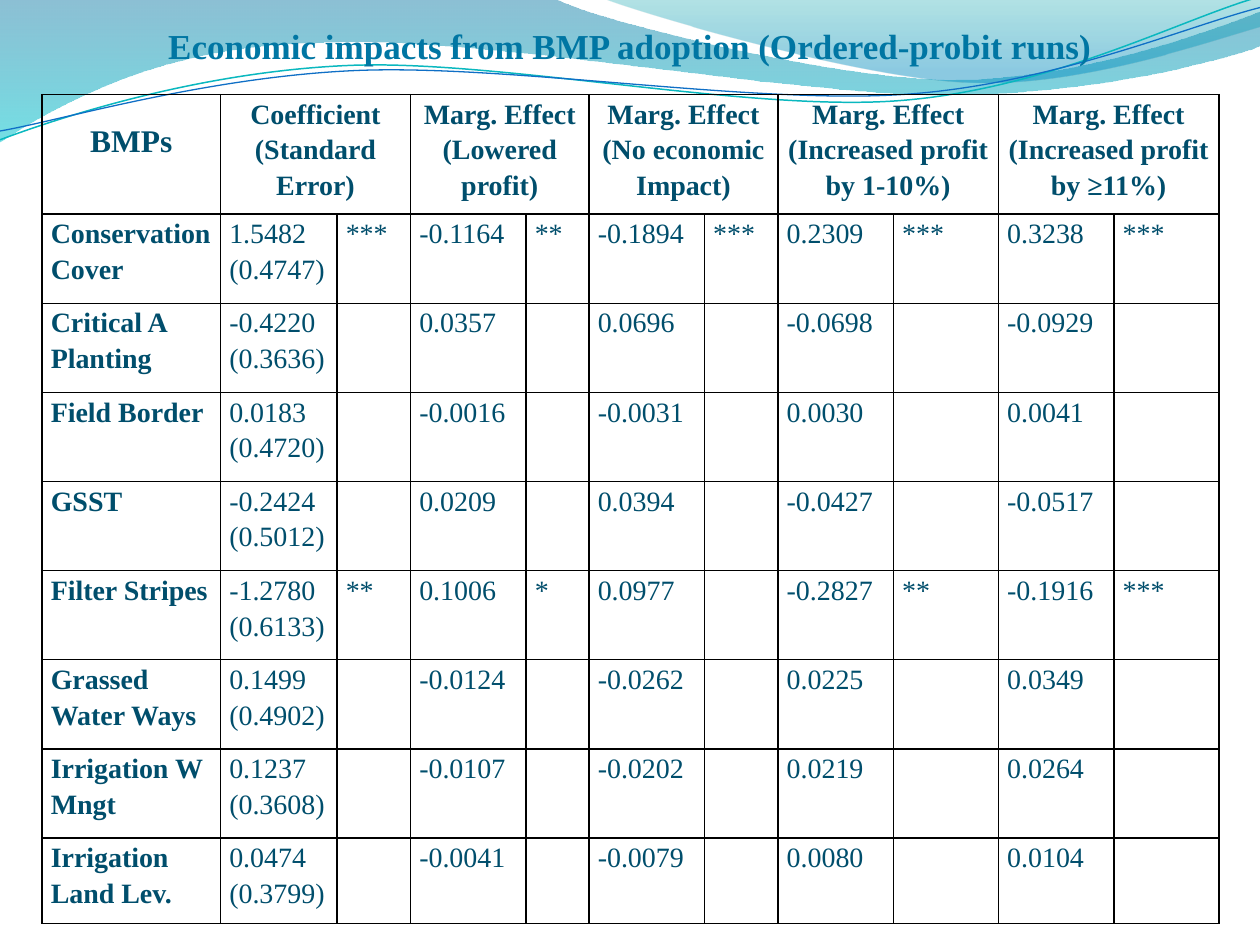
from lxml import etree
from pptx import Presentation
from pptx import util as u
from pptx.dml.color import RGBColor
from pptx.enum import text
from pptx.oxml.ns import qn

FONT = "Times New Roman"
TITLE_BLUE = RGBColor(0x00, 0x76, 0xA3)
TEXT_BLUE = RGBColor(0x00, 0x4E, 0x6C)
TEAL_LINE = RGBColor(0x0A, 0xB8, 0xBF)
BLUE_LINE = RGBColor(0x0F, 0x6F, 0xC6)
DEEP_BLUE = RGBColor(0x00, 0x74, 0xA1)
CYAN = RGBColor(0x00, 0xC6, 0xCF)
TEAL = RGBColor(0x00, 0xA1, 0xA9)
SKY = RGBColor(0x00, 0x8B, 0xBF)

# Content
TITLE = "Economic impacts from BMP adoption (Ordered-probit runs)"
HEADINGS = [
    "Coefficient\n(Standard Error)",
    "Marg. Effect (Lowered profit)",
    "Marg. Effect (No economic Impact)",
    "Marg. Effect (Increased profit by 1-10%)",
    "Marg. Effect (Increased profit by ≥11%)",
]
# Practice, standard error, five estimates, significance marks of the estimates
NO_MARKS = ("",) * 5
PRACTICES = [
    ("Conservation Cover", "0.4747", "1.5482 -0.1164 -0.1894 0.2309 0.3238",
     ("***", "**", "***", "***", "***")),
    ("Critical A Planting", "0.3636", "-0.4220 0.0357 0.0696 -0.0698 -0.0929", NO_MARKS),
    ("Field Border", "0.4720", "0.0183 -0.0016 -0.0031 0.0030 0.0041", NO_MARKS),
    ("GSST", "0.5012", "-0.2424 0.0209 0.0394 -0.0427 -0.0517", NO_MARKS),
    ("Filter Stripes", "0.6133", "-1.2780 0.1006 0.0977 -0.2827 -0.1916",
     ("**", "*", "", "**", "***")),
    ("Grassed Water Ways", "0.4902", "0.1499 -0.0124 -0.0262 0.0225 0.0349", NO_MARKS),
    ("Irrigation W Mngt", "0.3608", "0.1237 -0.0107 -0.0202 0.0219 0.0264", NO_MARKS),
    ("Irrigation Land Lev.", "0.3799", "0.0474 -0.0041 -0.0079 0.0080 0.0104", NO_MARKS),
]
# Table grid: columns in twelfths of an inch, body rows share what is left
COLUMNS = [17, 11.1, 7, 11, 6, 11, 7, 11, 10, 11, 10]
TABLE_HEIGHT, HEADER_HEIGHT, LAST_HEIGHT = 6.58, 0.95, 0.68
BODY_HEIGHT = (TABLE_HEIGHT - HEADER_HEIGHT - LAST_HEIGHT) / (len(PRACTICES) - 1)
ROWS = [HEADER_HEIGHT] + [BODY_HEIGHT] * (len(PRACTICES) - 1) + [LAST_HEIGHT]

# Outlines in inches: a start, then steps of one point (line) or three (curve)
BANDS = [
    ([[(0, -0.01)], [(4.4, -0.01)],
      [(4.76, 0.17), (6.64, 0.63), (7.58, 0.63)],
      [(8.53, 0.63), (9.58, 0.26), (10, 0.09)], [(10.01, 0.36)],
      [(9.83, 0.44), (8.7, 0.76), (7.46, 0.75)],
      [(6.22, 0.75), (3.82, 0.28), (2.57, 0.34)],
      [(1.29, 0.35), (0.46, 0.83), (-0.01, 1.13)], [(0, -0.01)]],
     [(0, DEEP_BLUE, 45), (1, CYAN, 55)]),
    ([[(4.79, -0.01)],
      [(5.09, 0.11), (6.82, 0.62), (7.69, 0.65)],
      [(8.56, 0.69), (9.61, 0.32), (10, 0.21)], [(10, 0)], [(4.79, -0.01)]],
     [(0, TEAL, 30), (0.8, SKY, 45)]),
]
STRANDS = [
    ([[(0, 1.11)],
      [(0.48, 0.93), (1.58, 0.57), (2.77, 0.52)],
      [(3.95, 0.47), (5.93, 0.89), (7.13, 0.8)],
      [(8.33, 0.71), (9.38, 0.15), (9.98, -0.02)]], TEAL_LINE, 0.85),
    ([[(0, 1.04)],
      [(0.47, 0.96), (1.64, 0.61), (2.83, 0.56)],
      [(4.03, 0.51), (5.97, 0.83), (7.17, 0.75)],
      [(8.36, 0.67), (9.41, 0.21), (10, 0.06)]], BLUE_LINE, 0.75),
]


def add_outline(page, steps, closed):
    """Build a freeform, joining each step of three points into a curve."""
    points = [(x * 1000, y * 1000) for step in steps for x, y in step]
    builder = page.shapes.build_freeform(*points[0], scale=u.Inches(1) / 1000)
    builder.add_line_segments(points[1:], close=closed)
    shape = builder.convert_to_shape()
    shape.shadow.inherit = False
    lines = iter(list(shape.element.iter(qn("a:lnTo"))))
    for step in steps[1:]:
        segment = [next(lines) for _ in step]
        if len(step) == 3:
            curve = etree.Element(qn("a:cubicBezTo"))
            segment[0].addprevious(curve)
            for line in segment:
                curve.append(line[0])
                line.getparent().remove(line)
    return shape


def add_waves(deck, page):
    waves = []
    for steps, stops in BANDS:
        band = add_outline(page, steps, True)
        band.line.fill.background()
        band.fill.gradient()
        band.fill.gradient_angle = 270
        for stop, (position, color, _) in zip(band.fill.gradient_stops, stops):
            stop.position = position
            stop.color.rgb = color
        colors = list(band.element.spPr.iter(qn("a:srgbClr")))
        for color, (_, _, opacity) in zip(colors, stops):
            etree.SubElement(color, qn("a:alpha"), val=str(opacity * 1000))
        waves.append(band)
    for steps, color, width in STRANDS:
        strand = add_outline(page, steps, False)
        strand.fill.background()
        strand.line.color.rgb = color
        strand.line.width = u.Pt(width)
        waves.append(strand)
    # The waves belong to the master, behind its placeholders
    tree = deck.slide_master.shapes.element
    for i, wave in enumerate(waves):
        wave.element.nvSpPr.cNvPr.set("id", str(101 + i))
        tree.insert(2 + i, wave.element)


def style_paragraph(para, size, color, bold, align):
    para.alignment = align
    para.font.size = u.Pt(size)
    for span in para.runs:
        span.font.name = FONT
        span.font.size = u.Pt(size)
        span.font.bold = bold
        span.font.color.rgb = color


def fill_cell(cell, words, size=16, bold=False, align=text.PP_ALIGN.LEFT, spacing=1.15):
    cell.margin_left = cell.margin_right = u.Inches(0.07)
    cell.margin_top = cell.margin_bottom = 0
    cell.text = words
    for para in cell.text_frame.paragraphs:
        style_paragraph(para, size, TEXT_BLUE, bold, align)
        para.line_spacing = spacing
    properties = cell._tc.get_or_add_tcPr()
    for side in ("lnL", "lnR", "lnT", "lnB"):
        border = etree.SubElement(properties, qn("a:" + side), w=str(u.Pt(1)))
        paint = etree.SubElement(border, qn("a:solidFill"))
        etree.SubElement(paint, qn("a:srgbClr"), val="000000")
    cell.fill.background()


def add_results(page):
    frame = page.shapes.add_table(len(ROWS), len(COLUMNS), u.Inches(4 / 12), u.Inches(9 / 12),
                                  u.Inches(sum(COLUMNS) / 12), u.Inches(TABLE_HEIGHT))
    table = frame.table
    table.first_row = table.horz_banding = False
    for column, twelfths in zip(table.columns, COLUMNS):
        column.width = u.Inches(twelfths / 12)
    for row, height in zip(table.rows, ROWS):
        row.height = u.Inches(height)

    # Header row: each heading spans an estimate and its mark
    center = text.PP_ALIGN.CENTER
    fill_cell(table.cell(0, 0), "BMPs", 18, True, center, 1)
    table.cell(0, 0).margin_top = u.Inches(0.24)
    for i, heading in enumerate(HEADINGS):
        left, right = table.cell(0, 2 * i + 1), table.cell(0, 2 * i + 2)
        fill_cell(left, heading, bold=True, align=center)
        fill_cell(right, "")
        left.merge(right)

    # One row per practice
    for r, (name, error, estimates, marks) in enumerate(PRACTICES, 1):
        fill_cell(table.cell(r, 0), name, bold=True)
        for i, (estimate, mark) in enumerate(zip(estimates.split(), marks)):
            words = f"{estimate}\n({error})" if i == 0 else estimate
            fill_cell(table.cell(r, 2 * i + 1), words)
            fill_cell(table.cell(r, 2 * i + 2), mark)


def add_title(page):
    title = page.shapes.title
    title.left, title.top, title.width, title.height = map(u.Inches, (0.5, 0.3, 9, 0.45))
    frame = title.text_frame
    frame.text = TITLE
    frame.word_wrap = True
    frame.auto_size = text.MSO_AUTO_SIZE.NONE
    frame.vertical_anchor = text.MSO_ANCHOR.MIDDLE
    frame.margin_top, frame.margin_bottom = 0, u.Inches(0.33)
    style_paragraph(frame.paragraphs[0], 20, TITLE_BLUE, True, text.PP_ALIGN.CENTER)
    page.shapes.element.append(title.element)  # in front of the table


def main():
    deck = Presentation()
    deck.slide_width, deck.slide_height = u.Inches(10), u.Inches(7.5)
    page = deck.slides.add_slide(deck.slide_layouts[5])
    add_waves(deck, page)
    add_results(page)
    add_title(page)
    deck.save("out.pptx")


if __name__ == "__main__":
    main()
